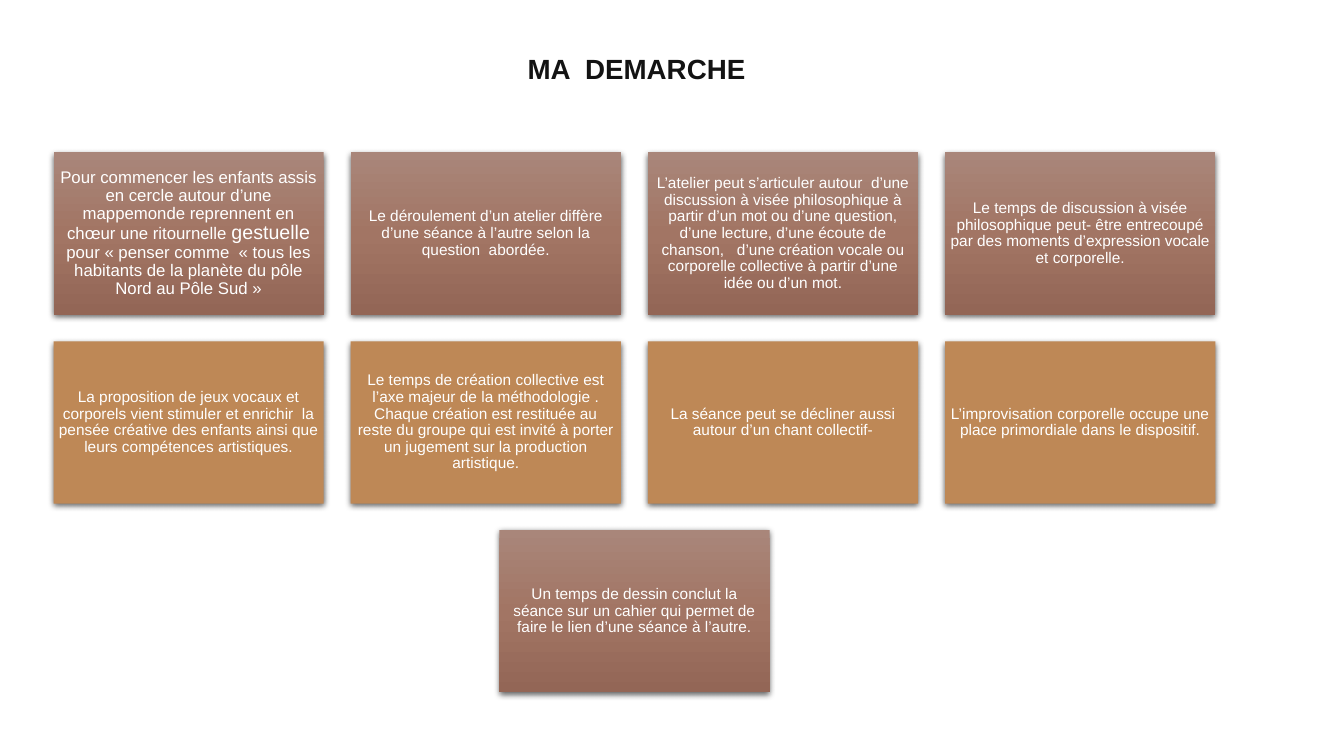
"""Build the slide "MA DEMARCHE": a title above rows of cards."""
from copy import deepcopy

from lxml import etree
from pptx import Presentation, util as u
from pptx.dml.color import RGBColor
from pptx.enum import shapes, text
from pptx.oxml import parse_xml
from pptx.oxml.ns import nsdecls, qn

SHADE = ["A9867A", "A27564", "936656"]
OCHRE = ["BE8856"]
ROWS = [
    (SHADE, [
        [("Pour commencer les enfants assis en cercle autour d’une mappemonde "
          "reprennent en chœur une ritournelle ", 12),
         ("gestuelle", 14),
         (" pour « penser comme  « tous les habitants de la planète "
          "du pôle Nord au Pôle Sud »", 12)],
        [("Le déroulement d’un atelier diffère d’une séance à l’autre "
          "selon la question  abordée.", 11)],
        [("L’atelier peut s’articuler autour  d’une discussion à visée "
          "philosophique à partir d’un mot ou d’une question, d’une lecture, "
          "d’une écoute de chanson,   d’une création vocale ou corporelle "
          "collective à partir d’une idée ou d’un mot.", 11)],
        [("Le temps de discussion à visée philosophique peut- être entrecoupé "
          "par des moments d’expression vocale et corporelle.", 11)],
    ]),
    (OCHRE, [
        [("La proposition de jeux vocaux et corporels vient stimuler et "
          "enrichir  la pensée créative des enfants ainsi que leurs "
          "compétences artistiques.", 11)],
        [("Le temps de création collective est l’axe majeur de la "
          "méthodologie . Chaque création est restituée au reste du groupe "
          "qui est invité à porter un jugement sur la production "
          "artistique.", 11)],
        [("La séance peut se décliner aussi autour d’un chant collectif-", 11)],
        [("L’improvisation corporelle occupe une place primordiale "
          "dans le dispositif.", 11)],
    ]),
    (SHADE, [
        [("Un temps de dessin conclut la séance sur un cahier qui permet "
          "de faire le lien d’une séance à l’autre.", 11)],
    ]),
]
LEFT, TOP = 1.35, 3.84
WIDE, HIGH = 6.81, 4.09
STEP, DROP = 7.49, 4.76


def tint(code):
    return RGBColor.from_string(code)


def write(shape, runs, color="FFFFFF", bold=False, anchor="MIDDLE", pad=0.13):
    frame = shape.text_frame
    frame.word_wrap = True
    frame.vertical_anchor = text.MSO_ANCHOR[anchor]
    frame.margin_left = frame.margin_right = u.Cm(pad)
    frame.margin_top = frame.margin_bottom = u.Cm(pad)
    para = frame.paragraphs[0]
    para.alignment = text.PP_ALIGN.CENTER
    para.line_spacing = 0.9
    for words, size in runs:
        run = para.add_run()
        run.text = words
        run.font.name = "Arial"
        run.font.size = u.Pt(size)
        run.font.bold = bold
        run.font.color.rgb = tint(color)


deck = Presentation()
deck.slide_width, deck.slide_height = u.Cm(33.87), u.Cm(19.05)
slide = deck.slides.add_slide(deck.slide_layouts[6])

title = slide.shapes.add_textbox(u.Cm(1.24), u.Cm(0.79), u.Cm(29.6), u.Cm(1.57))
write(title, [("MA  DEMARCHE", 19.8)], color="131313", bold=True,
      anchor="BOTTOM", pad=0.2)

shadow = parse_xml(
    f'<a:outerShdw {nsdecls("a")} blurRad="57150" dist="19050" dir="5400000" '
    'algn="ctr" rotWithShape="0"><a:srgbClr val="000000">'
    '<a:alpha val="63000"/></a:srgbClr></a:outerShdw>')

for row, (colors, cards) in enumerate(ROWS):
    start = LEFT + (4 - len(cards)) / 2 * STEP
    for col, runs in enumerate(cards):
        card = slide.shapes.add_shape(
            shapes.MSO_SHAPE.RECTANGLE, u.Cm(start + col * STEP),
            u.Cm(TOP + row * DROP), u.Cm(WIDE), u.Cm(HIGH))
        card.line.fill.background()
        props = card._element.spPr
        if len(colors) == 1:
            card.fill.solid()
            card.fill.fore_color.rgb = tint(colors[0])
        else:
            card.fill.gradient()
            card.fill.gradient_angle = 270
            stops = props.find(".//" + qn("a:gsLst"))
            stops.insert(1, deepcopy(stops[0]))
            for num, stop in enumerate(card.fill.gradient_stops):
                stop.position = num / 2
                stop.color.rgb = tint(colors[num])
        card.shadow.inherit = False
        props.find(qn("a:effectLst")).append(deepcopy(shadow))
        write(card, runs)

deck.save("out.pptx")
